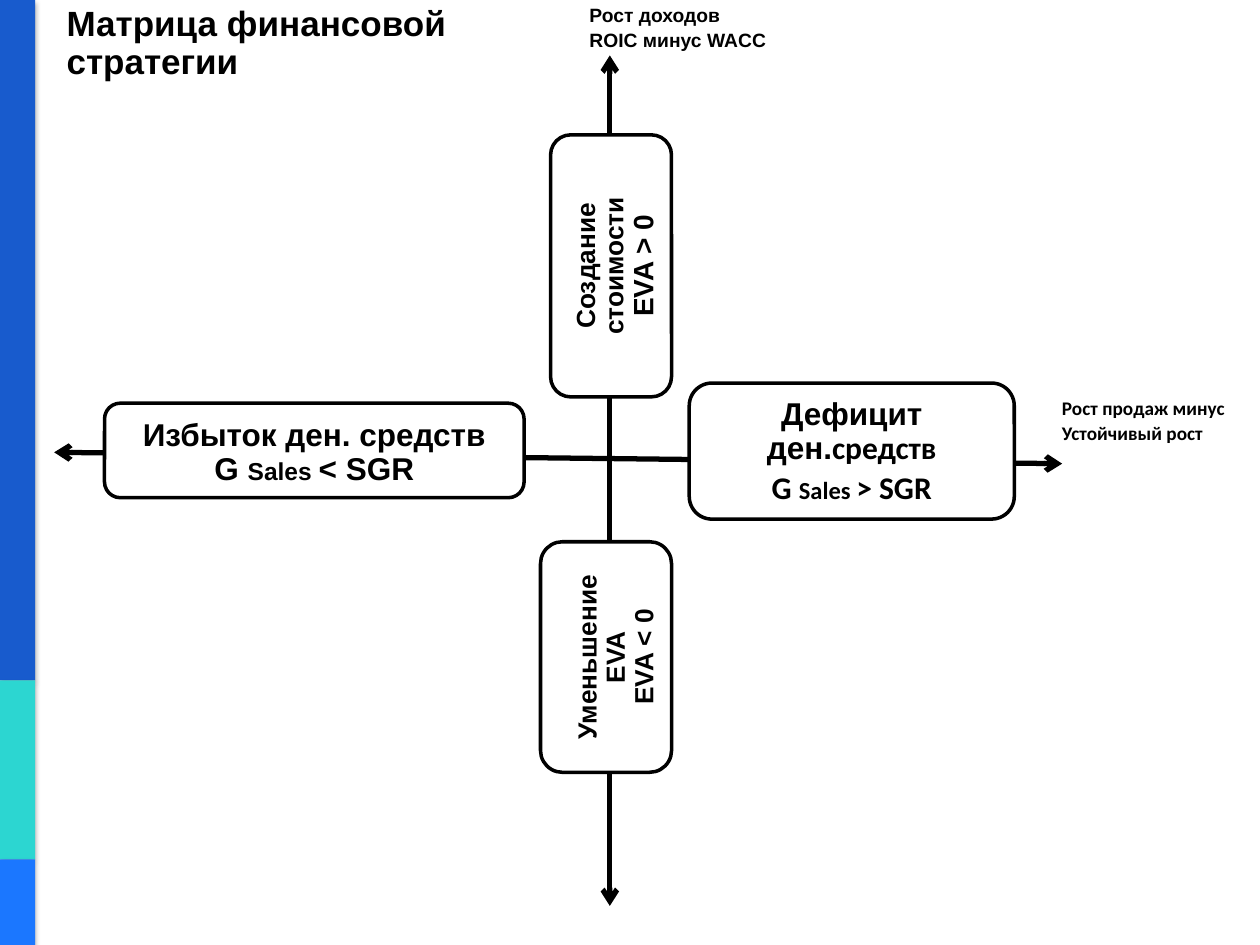
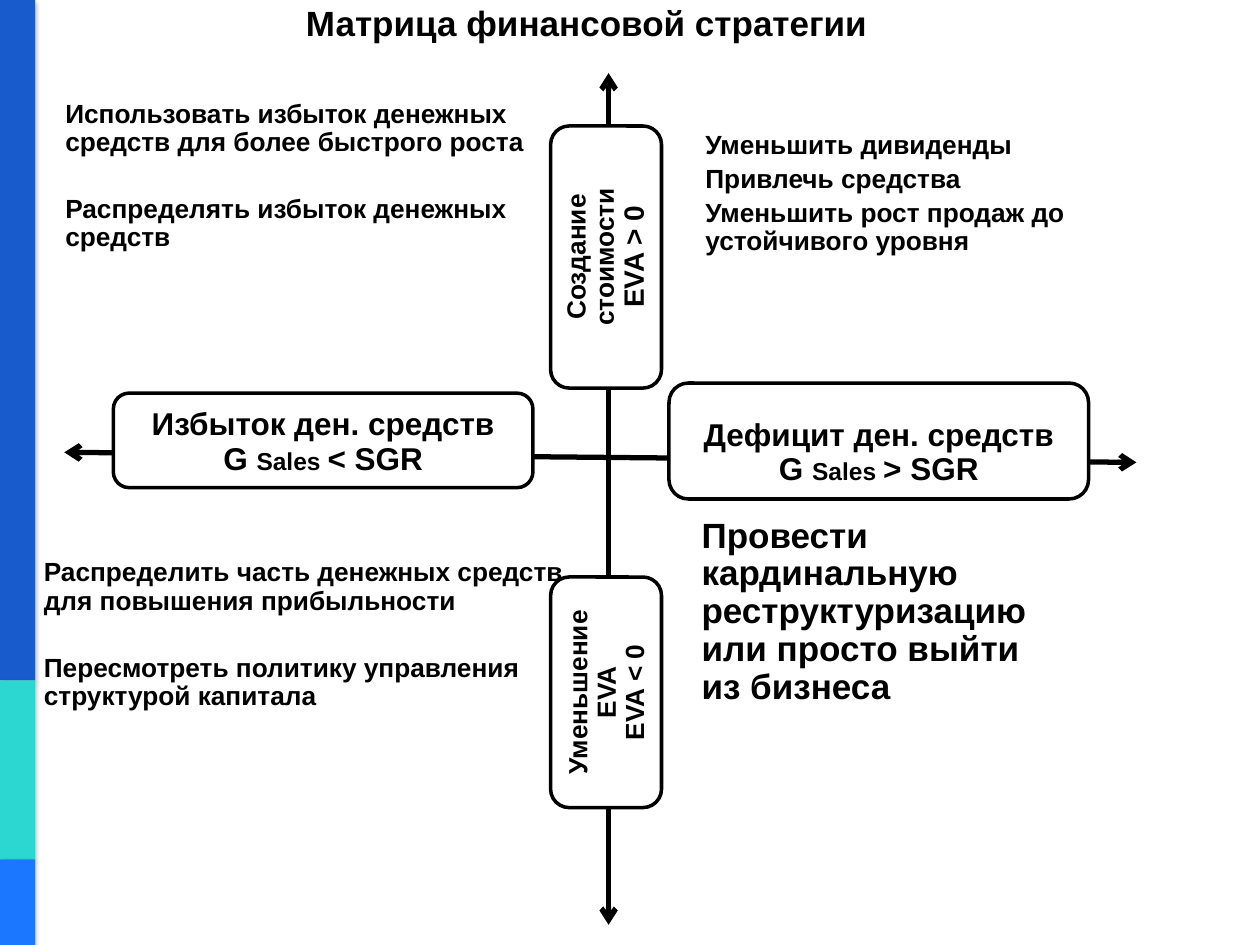
from lxml import etree
from pptx import Presentation
from pptx.dml.color import RGBColor
from pptx.enum.shapes import MSO_CONNECTOR, MSO_SHAPE
from pptx.enum.text import MSO_ANCHOR, PP_ALIGN
from pptx.oxml.ns import qn
from pptx.util import Inches, Pt

RECTANGLE = MSO_SHAPE.RECTANGLE
ROUNDED = MSO_SHAPE.ROUNDED_RECTANGLE
STRAIGHT = MSO_CONNECTOR.STRAIGHT
BOTTOM = MSO_ANCHOR.BOTTOM
LEFT, CENTER = PP_ALIGN.LEFT, PP_ALIGN.CENTER

COLORS = {"ink": "000000", "paper": "FFFFFF",
          "blue": "185BCD", "teal": "2CD6D1", "azure": "1B77FF"}
SANS, LABEL = "Arial", "Calibri"
TITLE, HEADING, BODY, SMALL, NOTE = 20, 18, 15, 14, 11
COLUMNS, ROWS = 100, 75
BAND_WIDTH = 2.8
BANDS = [("blue", 0, 54), ("teal", 54, 68.2), ("azure", 68.2, 75)]
TITLE_TEXT = "Матрица финансовой стратегии"


class Matrix:
    """Holds the style, the deck and the slide being drawn."""

    def __init__(self):
        self.deck = Presentation()
        self.deck.slide_width, self.deck.slide_height = Inches(10), Inches(7.5)
        self.page = None

    def grid(self, *lengths):
        """Turn alternating columns and rows into slide lengths."""
        units = (self.deck.slide_width / COLUMNS, self.deck.slide_height / ROWS)
        return [round(length * units[index % 2])
                for index, length in enumerate(lengths)]

    def color(self, name):
        return RGBColor.from_string(COLORS[name])

    def new_page(self):
        self.page = self.deck.slides.add_slide(self.deck.slide_layouts[6])
        for name, top, bottom in BANDS:
            self.band(name, top, bottom)

    def shape(self, kind, place, fill):
        shape = self.page.shapes.add_shape(kind, *self.grid(*place))
        shape.element.remove(shape.element.find(qn("p:style")))
        shape.shadow.inherit = False
        shape.fill.solid()
        shape.fill.fore_color.rgb = self.color(fill)
        return shape

    def band(self, name, top, bottom):
        band = self.shape(RECTANGLE, (0, top, BAND_WIDTH, bottom - top), name)
        band.line.fill.background()
        effects = band.element.spPr.find(qn("a:effectLst"))
        shadow = etree.SubElement(effects, qn("a:outerShdw"), blurRad=str(Pt(3.1)),
                                  dist=str(Pt(1.8)), dir="5400000", rotWithShape="0")
        tint = etree.SubElement(shadow, qn("a:srgbClr"), val=COLORS["ink"])
        etree.SubElement(tint, qn("a:alpha"), val="35000")

    def axis(self, *ends):
        axis = self.page.shapes.add_connector(STRAIGHT, *self.grid(*ends))
        axis.line.color.rgb = self.color("ink")
        axis.line.width = Pt(3)
        properties = axis.element.spPr
        for tag in ("a:headEnd", "a:tailEnd"):
            etree.SubElement(properties.find(qn("a:ln")), qn(tag), type="arrow")
        etree.SubElement(properties, qn("a:effectLst"))

    def set_paras(self, frame, paras, size, font=SANS, align=LEFT, gap=0):
        """Each para is a string or a list of (text, size, font) spans."""
        frame.word_wrap = True
        for index, spans in enumerate(paras):
            para = frame.add_paragraph() if index else frame.paragraphs[0]
            para.alignment, para.line_spacing = align, 0.9
            para.space_before = Pt(gap if index else 0)
            para.font.size, para.font.name = Pt(size), font
            para.font.bold = True
            para.font.color.rgb = self.color("ink")
            if isinstance(spans, str):
                spans = [(spans, size, font)]
            for text, span_size, span_font in spans:
                span = para.add_run()
                span.text = text
                if span_size != size:
                    span.font.size = Pt(span_size)
                if span_font != font:
                    span.font.name = span_font

    def text(self, place, paras, size, font=SANS, gap=0):
        box = self.page.shapes.add_textbox(*self.grid(*place))
        self.set_paras(box.text_frame, paras, size, font, gap=gap)

    def box(self, place, paras, size=HEADING, gap=0, upright=False):
        box = self.shape(ROUNDED, place, "paper")
        box.line.color.rgb = self.color("ink")
        box.line.width = Pt(2)
        frame = box.text_frame
        frame.vertical_anchor = BOTTOM
        self.set_paras(frame, paras, size, align=CENTER, gap=gap)
        if upright:
            box.element.txBody.find(qn("a:bodyPr")).set("vert", "vert270")

    def value_boxes(self, creation, reduction):
        """Upper and lower boxes on the vertical axis."""
        self.box(creation, ["Создание стоимости", [("EVA > 0", 16, SANS)]],
                 BODY, upright=True)
        self.box(reduction, ["Уменьшение EVA", "EVA < 0"], BODY, upright=True)

    def surplus_box(self, place):
        self.box(place, ["Избыток ден. средств", growth("<")])


def growth(sign, font=SANS):
    """Spans that compare sales growth with sustainable growth."""
    return [("G ", HEADING, font), ("Sales ", SMALL, font),
            (f"{sign} SGR", HEADING, font)]


def draw_axes_page(matrix):
    matrix.new_page()
    # Axes and their labels
    matrix.axis(48.4, 4.4, 48.4, 71.9)
    matrix.axis(4.3, 35.9, 84.3, 36.8)
    matrix.text((83.3, 31.2, 16.7, 4.7), ["Рост продаж минус", "Устойчивый рост"],
                NOTE, LABEL, gap=2.2)
    matrix.text((45.8, 0, 20, 4.7), ["Рост доходов", "ROIC минус WACC"],
                NOTE, gap=2.2)
    # Boxes on the axes
    matrix.surplus_box((8.3, 32, 33.3, 7.5))
    shortage = [("Дефицит ден.", HEADING, SANS), ("средств", HEADING, LABEL)]
    matrix.box((54.7, 30.4, 25.8, 10.8), [shortage, growth(">", LABEL)], gap=3.6)
    matrix.value_boxes((43.7, 10.7, 9.6, 20.8), (42.9, 43, 10.4, 18.3))
    # Title
    matrix.text((4.3, 0, 43.2, 10.8), [TITLE_TEXT], TITLE)


def draw_strategy_page(matrix):
    matrix.new_page()
    # Axes
    matrix.axis(48.3, 5.8, 48.3, 73.4)
    matrix.axis(5.1, 35.9, 90.2, 36.7)
    # Boxes on the axes
    matrix.surplus_box((9, 31.2, 33.3, 7.5))
    matrix.box((53.1, 30.4, 33.3, 9.2), ["Дефицит ден. средств", growth(">")])
    matrix.value_boxes((43.7, 10, 8.8, 20.8), (43.7, 45.8, 8.8, 18.3))
    # Title
    matrix.text((23.3, 0, 47.5, 7.7), [TITLE_TEXT], TITLE)
    # Advice in the four quadrants
    matrix.text((4.2, 7.5, 40, 21.5),
                ["Использовать избыток денежных средств для более быстрого роста",
                 "Распределять избыток денежных средств"], BODY, gap=22)
    matrix.text((2.5, 43.9, 43.3, 18.4),
                ["Распределить часть денежных средств для повышения прибыльности",
                 "Пересмотреть политику управления структурой капитала"],
                BODY, gap=22)
    matrix.text((54.7, 40.6, 30, 19.2),
                ["Провести кардинальную реструктуризацию или просто выйти из бизнеса"],
                TITLE)
    matrix.text((55, 10, 42.5, 13.5),
                ["Уменьшить дивиденды", "Привлечь средства",
                 "Уменьшить рост продаж до устойчивого уровня"], BODY, gap=3)


def main():
    matrix = Matrix()
    draw_axes_page(matrix)
    draw_strategy_page(matrix)
    matrix.deck.save("out.pptx")


if __name__ == "__main__":
    main()
